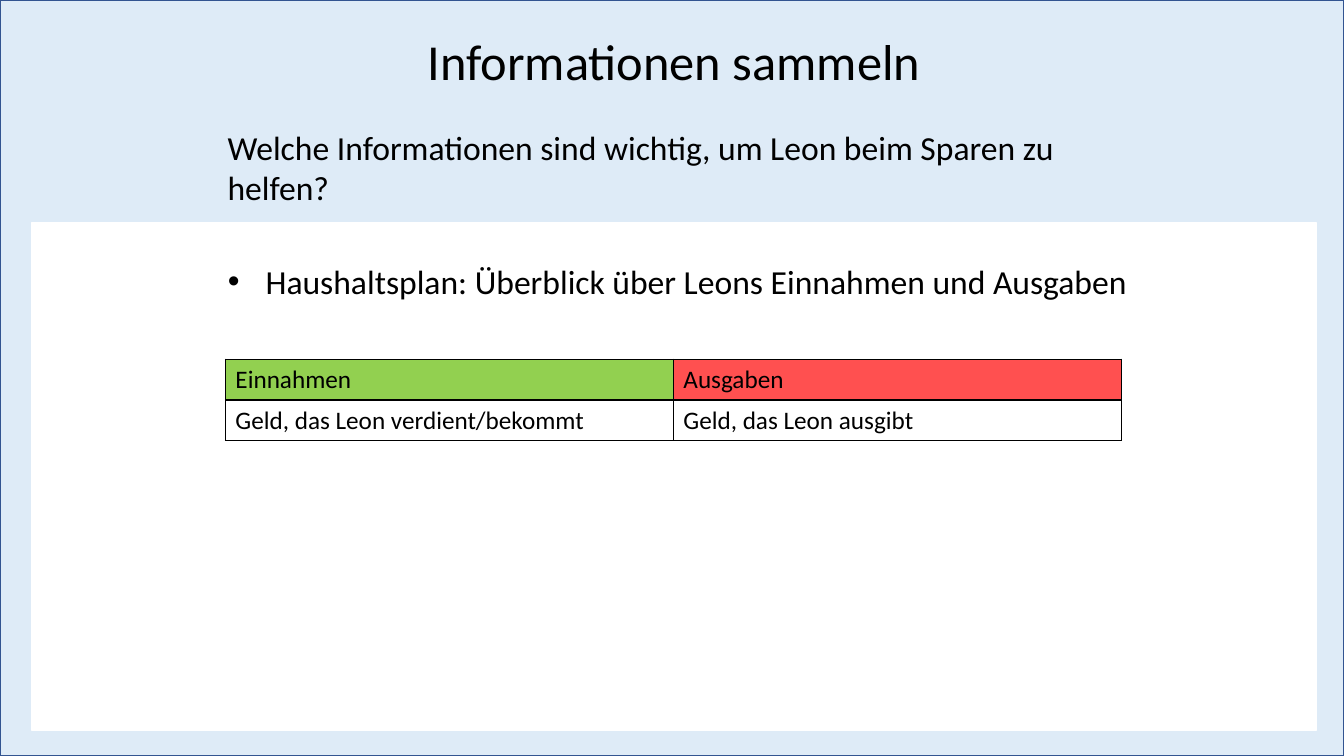
from lxml.etree import SubElement
from pptx import Presentation
from pptx.dml.color import RGBColor
from pptx.enum.shapes import MSO_SHAPE
from pptx.enum.text import MSO_ANCHOR, MSO_AUTO_SIZE, PP_ALIGN
from pptx.oxml.ns import qn
from pptx.util import Pt

WIDTH, HEIGHT = 960, 540


def color(hex_value):
    return RGBColor.from_string(hex_value)


def place(item, box):
    item.left, item.top, item.width, item.height = map(Pt, box)


def write(frame, text, size, align=PP_ALIGN.LEFT):
    frame.text = text
    frame.word_wrap = True
    frame.auto_size = MSO_AUTO_SIZE.NONE
    frame.vertical_anchor = MSO_ANCHOR.TOP
    paragraph = frame.paragraphs[0]
    paragraph.alignment = align
    paragraph.space_before = Pt(0)
    return style(paragraph, size)


def style(paragraph, size):
    paragraph.font.name = "Calibri"
    paragraph.font.size = Pt(size)
    paragraph.font.color.rgb = color("000000")
    return paragraph


def add_panel(slide, box, fill, line):
    panel = slide.shapes.add_shape(MSO_SHAPE.RECTANGLE, *map(Pt, box))
    panel.shadow.inherit = False
    panel.fill.solid()
    panel.fill.fore_color.rgb = color(fill)
    panel.line.color.rgb = color(line)
    panel.line.width = Pt(1)
    slide.shapes.title.element.addprevious(panel.element)


def add_heading(slide, box):
    heading = slide.shapes.title
    place(heading, box)
    write(heading.text_frame, "Informationen sammeln", 36, PP_ALIGN.CENTER)


def add_question(slide, box):
    question = slide.shapes.add_textbox(*map(Pt, box))
    write(question.text_frame,
          "Welche Informationen sind wichtig, um Leon beim Sparen zu helfen?", 24)


def add_answer(slide, box):
    answer = slide.placeholders[1]
    place(answer, box)
    frame = answer.text_frame
    frame.text = "Haushaltsplan: Überblick über Leons Einnahmen und Ausgaben"
    properties = frame.paragraphs[0]._p.get_or_add_pPr()
    indent = Pt(27)
    properties.set("marL", str(indent))
    properties.set("indent", str(-indent))
    SubElement(properties, qn("a:buFont"), typeface="Calibri")
    SubElement(properties, qn("a:buChar"), char="→")
    write(frame, frame.text, 24)


def add_borders(cell):
    properties = cell._tc.get_or_add_tcPr()
    for position, side in enumerate(("lnL", "lnR", "lnT", "lnB")):
        border = SubElement(properties, qn(f"a:{side}"), w=str(Pt(1)))
        fill = SubElement(border, qn("a:solidFill"))
        SubElement(fill, qn("a:srgbClr"), val="000000")
        properties.insert(position, border)


def add_budget(slide, box):
    rows = [
        [("Einnahmen", "92D050"), ("Ausgaben", "FF5050")],
        [("Geld, das Leon verdient/bekommt", "FFFFFF"),
         ("Geld, das Leon ausgibt", "FFFFFF")],
    ]
    budget = slide.shapes.add_table(len(rows), len(rows[0]), *map(Pt, box)).table
    for row, entries in enumerate(rows):
        for column, (text, fill) in enumerate(entries):
            cell = budget.cell(row, column)
            cell.text = text
            cell.fill.solid()
            cell.fill.fore_color.rgb = color(fill)
            style(cell.text_frame.paragraphs[0], 18).font.bold = False
            add_borders(cell)


def build_collect_slide(deck, box):
    left, top, width, height = box
    slide = deck.slides.add_slide(deck.slide_layouts[1])
    inner_left, inner_width = left + 23, width - 43
    text_left = left + 155.5
    add_panel(slide, box, "DEEBF7", "325491")
    add_panel(slide, (inner_left, top + 159, inner_width, height - 177),
              "FFFFFF", "FFFFFF")
    add_heading(slide, (inner_left, top + 18, inner_width, 51))
    add_question(slide, (text_left, top + 87, 649, 36))
    add_answer(slide, (text_left, top + 183, 749.5, 327))
    add_budget(slide, (left + 161, top + 256.5, 640, 58.4))


def main():
    deck = Presentation()
    deck.slide_width, deck.slide_height = Pt(WIDTH), Pt(HEIGHT)
    build_collect_slide(deck, (0, 0, WIDTH, HEIGHT))
    deck.save("out.pptx")


if __name__ == "__main__":
    main()
